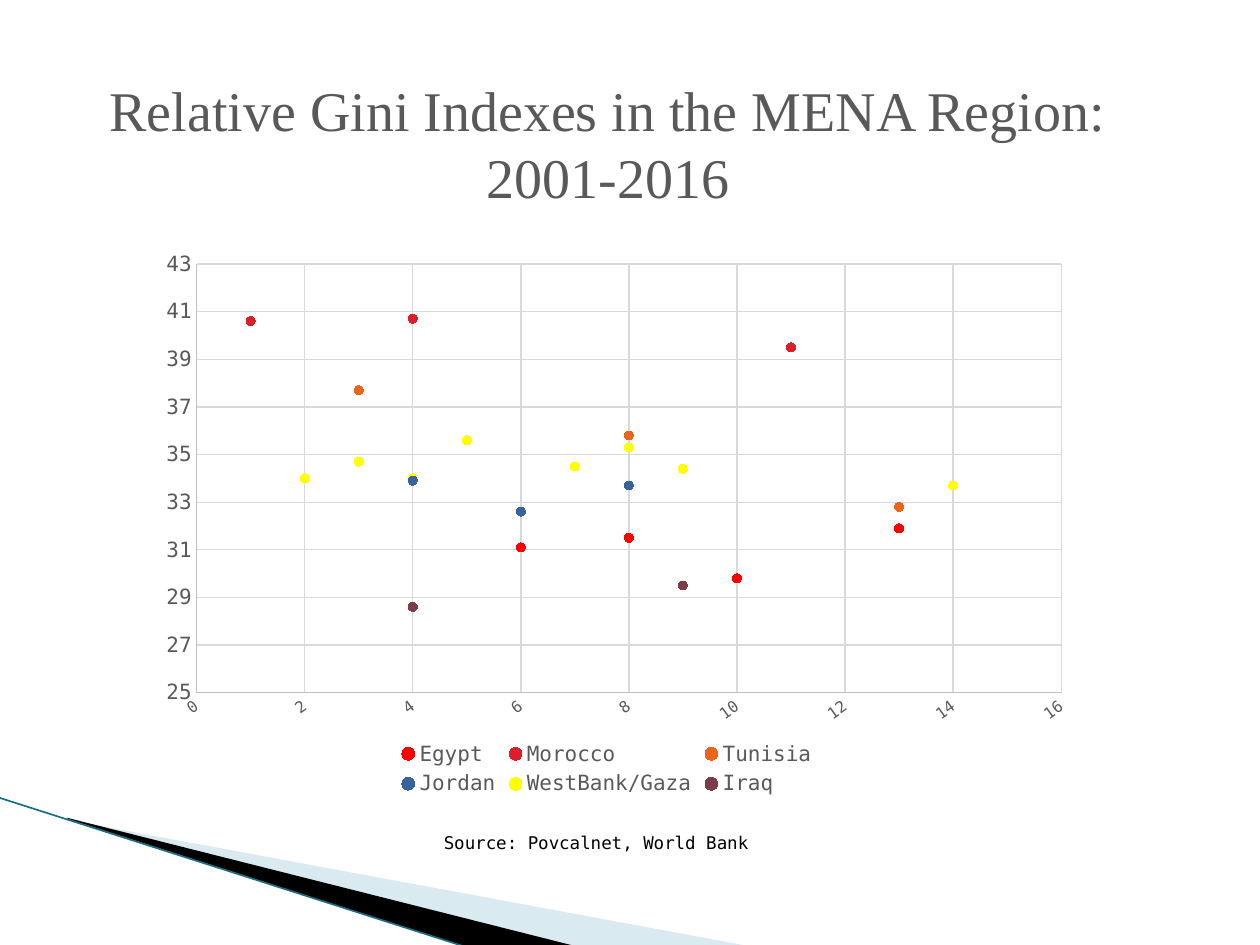
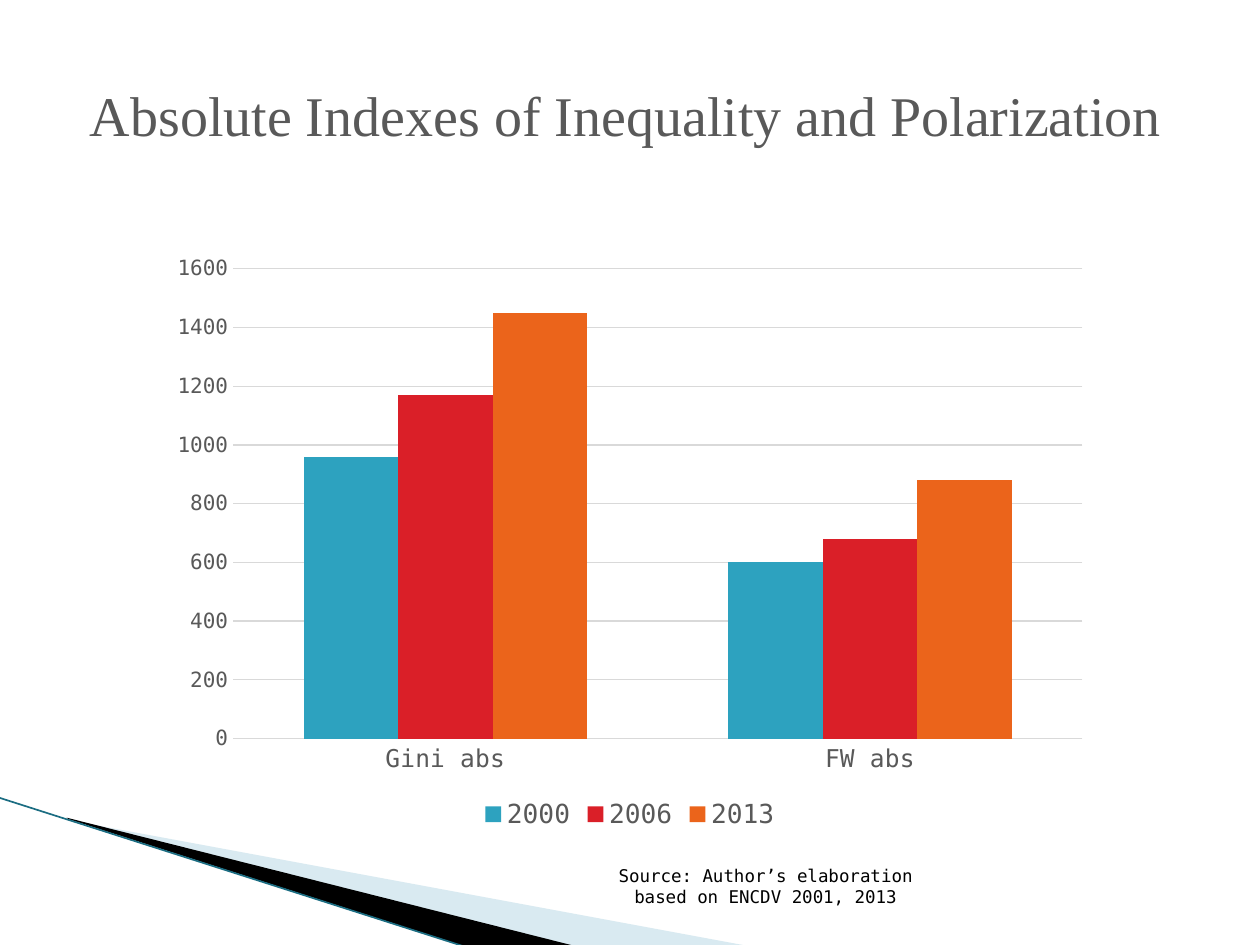
from dataclasses import dataclass

from lxml.etree import SubElement
from pptx import Presentation
from pptx.chart.data import CategoryChartData, XyChartData
from pptx.dml.color import RGBColor
from pptx.enum.chart import XL_CHART_TYPE as ChartType
from pptx.enum.chart import XL_LEGEND_POSITION as LegendPosition
from pptx.enum.chart import XL_MARKER_STYLE as MarkerStyle
from pptx.enum.chart import XL_TICK_MARK as TickMark
from pptx.enum.shapes import MSO_CONNECTOR as Connector
from pptx.enum.text import MSO_ANCHOR as Anchor
from pptx.enum.text import PP_ALIGN as Align
from pptx.oxml.ns import qn
from pptx.util import Inches, Pt


@dataclass(frozen=True)
class Theme:
    title_font: str = "Times New Roman"
    body_font: str = "DejaVu Sans Mono"
    gray: str = "595959"
    black: str = "000000"
    axis_line: str = "BFBFBF"
    grid: str = "D9D9D9"
    pale_blue: str = "A0CBDC"
    dark_teal: str = "1B6D82"
    teal: str = "2DA2BF"
    crimson: str = "DA1F28"
    orange: str = "EB641B"
    red: str = "FF0000"
    blue: str = "39639D"
    yellow: str = "FFFF00"
    maroon: str = "7D3C4A"
    title_size: float = 32
    source_size: float = 10
    small_label_size: float = 9
    label_size: float = 12
    category_size: float = 14
    legend_size: float = 15


THEME = Theme()

# Gini index by survey round; rounds without a survey stay empty.
SURVEY_ROUNDS = range(1, 15)
GINI_BY_ROUND = {
    "Egypt": (THEME.red, {6: 31.1, 8: 31.5, 10: 29.8, 13: 31.9}),
    "Morocco": (THEME.crimson, {1: 40.6, 4: 40.7, 11: 39.5}),
    "Tunisia": (THEME.orange, {3: 37.7, 8: 35.8, 13: 32.8}),
    "Jordan": (THEME.blue, {4: 33.9, 6: 32.6, 8: 33.7}),
    "WestBank/Gaza": (THEME.yellow, {2: 34, 3: 34.7, 4: 34, 5: 35.6, 7: 34.5,
                                     8: 35.3, 9: 34.4, 14: 33.7}),
    "Iraq": (THEME.maroon, {4: 28.6, 9: 29.5}),
}
ABSOLUTE_INDEXES = {
    "2000": (THEME.teal, [960, 600]),
    "2006": (THEME.crimson, [1170, 680]),
    "2013": (THEME.orange, [1450, 880]),
}


def inches(*lengths):
    return [Inches(length) for length in lengths]


def rgb(color):
    return RGBColor.from_string(color)


def set_font(font, name, size, color):
    font.name = name
    font.size = Pt(size)
    font.color.rgb = rgb(color)


def fill_solid(fill, color):
    fill.solid()
    fill.fore_color.rgb = rgb(color)


def set_line(line, color, width=0.75):
    """Draw the line in the colour, or hide it when the colour is None."""
    if color is None:
        line.fill.background()
    else:
        line.color.rgb = rgb(color)
        line.width = Pt(width)


def add_text(slide, box, text, font_name, size, color, anchor=Anchor.TOP, bottom_inset=0.05):
    frame = slide.shapes.add_textbox(*inches(*box)).text_frame
    frame.word_wrap = True
    frame.vertical_anchor = anchor
    frame.margin_bottom = Inches(bottom_inset)
    frame.text = text
    paragraph = frame.paragraphs[0]
    paragraph.alignment = Align.CENTER
    set_font(paragraph.runs[0].font, font_name, size, color)


def add_title(slide, box, text):
    add_text(slide, box, text, THEME.title_font, THEME.title_size, THEME.gray)


def add_source(slide, box, text, bottom_inset=0.05):
    add_text(slide, box, text, THEME.body_font, THEME.source_size, THEME.black,
             Anchor.BOTTOM, bottom_inset)


def add_wedge(slide, points, color, opacity=None):
    start, *others = [inches(*point) for point in points]
    builder = slide.shapes.build_freeform(*start)
    builder.add_line_segments(others, close=True)
    wedge = builder.convert_to_shape()
    wedge.shadow.inherit = False
    fill_solid(wedge.fill, color)
    wedge.line.fill.background()
    if opacity is not None:
        color_element = wedge.fill._xPr.find(".//" + qn("a:srgbClr"))
        SubElement(color_element, qn("a:alpha"), val=str(opacity * 1000))


def add_corner_sweep(slide):
    """Draw the two wedges and the edge line in the bottom left corner."""
    add_wedge(slide, [(0.55, 6.51), (5.95, 7.51), (4.56, 7.51), (0.55, 6.5)],
              THEME.pale_blue, 40)
    add_wedge(slide, [(0.53, 6.49), (4.57, 7.51), (3.72, 7.52), (0.54, 6.5)], THEME.black)
    edge = slide.shapes.add_connector(Connector.STRAIGHT, *inches(-0.01, 6.33, 3.71, 7.52))
    set_line(edge.line, THEME.dark_teal, 0.95)
    SubElement(edge._element.spPr, qn("a:effectLst"))


def add_chart(slide, box, chart_type, data, legend_size):
    chart = slide.shapes.add_chart(chart_type, *inches(*box), data).chart
    chart.has_title = False
    set_font(chart.font, THEME.body_font, THEME.source_size, THEME.black)
    chart.has_legend = True
    chart.legend.position = LegendPosition.BOTTOM
    chart.legend.include_in_layout = False
    set_font(chart.legend.font, THEME.body_font, legend_size, THEME.gray)
    chart.plots[0].vary_by_categories = False
    return chart


def style_axis(axis, size, line_color=None, has_grid=True):
    axis.major_tick_mark = axis.minor_tick_mark = TickMark.NONE
    set_font(axis.tick_labels.font, THEME.body_font, size, THEME.gray)
    set_line(axis.format.line, line_color)
    axis.has_major_gridlines = has_grid
    if has_grid:
        set_line(axis.major_gridlines.format.line, THEME.grid)


def set_scale(axis, minimum, maximum, step):
    axis.minimum_scale = minimum
    axis.maximum_scale = maximum
    axis.major_unit = step


def set_inner_plot(chart, x, y, w, h):
    """Fix the plot area, in fractions of the chart's size."""
    plot_area = chart._chartSpace.chart.plotArea
    for old_layout in plot_area.findall(qn("c:layout")):
        plot_area.remove(old_layout)
    layout = SubElement(plot_area, qn("c:layout"))
    plot_area.insert(0, layout)
    manual = SubElement(layout, qn("c:manualLayout"))
    settings = {"layoutTarget": "inner", "xMode": "edge", "yMode": "edge",
                "x": x, "y": y, "w": w, "h": h}
    for name, value in settings.items():
        SubElement(manual, qn("c:" + name), val=str(value))


def add_gini_scatter(slide, box):
    data = XyChartData()
    for country, (_, gini_by_round) in GINI_BY_ROUND.items():
        series = data.add_series(country)
        for survey_round in SURVEY_ROUNDS:
            series.add_data_point(survey_round, gini_by_round.get(survey_round))
    chart = add_chart(slide, box, ChartType.XY_SCATTER, data, THEME.label_size)
    set_inner_plot(chart, 0.078, 0.079, 0.89, 0.735)
    round_axis, gini_axis = chart.category_axis, chart.value_axis
    style_axis(round_axis, THEME.small_label_size, THEME.axis_line)
    style_axis(gini_axis, THEME.label_size, THEME.axis_line)
    set_scale(round_axis, 0, 16, 2)
    set_scale(gini_axis, 25, 43, 2)
    label_body = round_axis._element.find(qn("c:txPr")).find(qn("a:bodyPr"))
    label_body.set("rot", "-2160000")
    for series, (color, _) in zip(chart.plots[0].series, GINI_BY_ROUND.values()):
        series.smooth = False
        set_line(series.format.line, None)
        series.marker.style = MarkerStyle.CIRCLE
        series.marker.size = 5
        fill_solid(series.marker.format.fill, color)
        set_line(series.marker.format.line, color)


def add_index_columns(slide, box):
    data = CategoryChartData()
    data.categories = ["Gini abs", "FW abs"]
    for year, (_, values) in ABSOLUTE_INDEXES.items():
        data.add_series(year, values)
    chart = add_chart(slide, box, ChartType.COLUMN_CLUSTERED, data, THEME.legend_size)
    style_axis(chart.category_axis, THEME.category_size, has_grid=False)
    style_axis(chart.value_axis, THEME.label_size)
    set_scale(chart.value_axis, 0, 1600, 200)
    plot = chart.plots[0]
    plot.gap_width = 150
    plot.overlap = 0
    for series, (color, _) in zip(plot.series, ABSOLUTE_INDEXES.values()):
        fill_solid(series.format.fill, color)


def add_base_slide(presentation):
    slide = presentation.slides.add_slide(presentation.slide_layouts[6])
    add_corner_sweep(slide)
    return slide


def build_relative_slide(presentation):
    slide = add_base_slide(presentation)
    add_source(slide, (1.61, 6.42, 6.24, 0.4), "Source: Povcalnet, World Bank")
    add_gini_scatter(slide, (0.96, 1.73, 7.71, 4.63))
    add_title(slide, (0.71, 0.55, 8.23, 1.18),
              "Relative Gini Indexes in the MENA Region: 2001-2016")


def build_absolute_slide(presentation):
    slide = add_base_slide(presentation)
    add_source(slide, (4.79, 7.01, 2.57, 0.4),
               "Source: Author’s elaboration based on ENCDV 2001, 2013", bottom_inset=0.21)
    add_index_columns(slide, (1.26, 1.94, 7.48, 4.69))
    add_title(slide, (0.49, 0.59, 8.96, 0.64),
              "Absolute Indexes of Inequality and Polarization")


def main():
    presentation = Presentation()
    presentation.slide_width, presentation.slide_height = inches(10, 7.5)
    build_relative_slide(presentation)
    build_absolute_slide(presentation)
    presentation.save("out.pptx")


if __name__ == "__main__":
    main()
